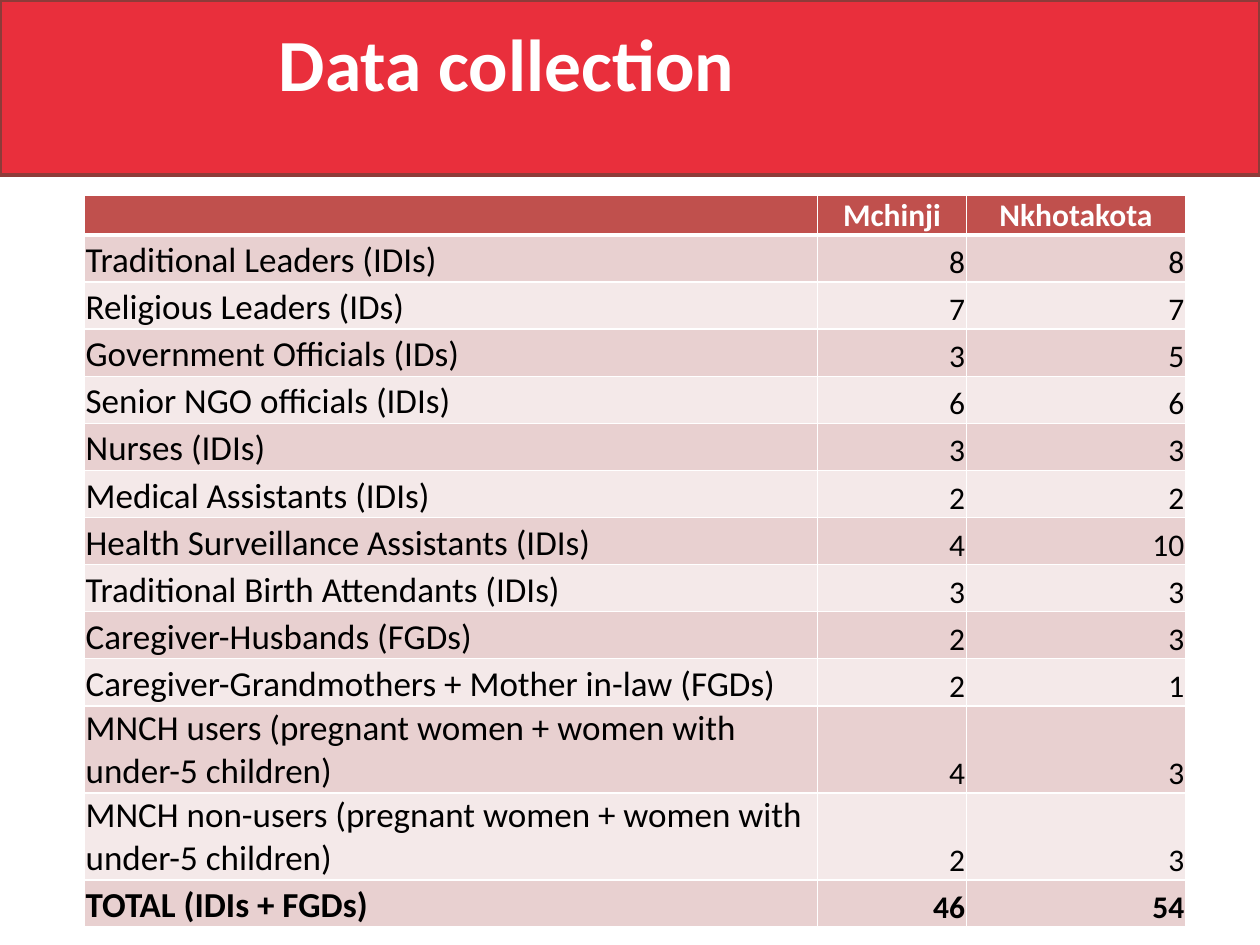
from lxml import etree
from pptx import Presentation
from pptx import util as u
from pptx.dml.color import RGBColor
from pptx.enum import shapes, text
from pptx.oxml.ns import qn

LEFT, CENTER, RIGHT = text.PP_ALIGN.LEFT, text.PP_ALIGN.CENTER, text.PP_ALIGN.RIGHT
HEADER = ("", "Mchinji", "Nkhotakota")
ROWS = [
    ("Traditional Leaders (IDIs)", 8, 8),
    ("Religious Leaders (IDs)", 7, 7),
    ("Government Officials (IDs)", 3, 5),
    ("Senior NGO officials (IDIs)", 6, 6),
    ("Nurses (IDIs)", 3, 3),
    ("Medical Assistants (IDIs)", 2, 2),
    ("Health Surveillance Assistants (IDIs)", 4, 10),
    ("Traditional Birth Attendants (IDIs)", 3, 3),
    ("Caregiver-Husbands (FGDs)", 2, 3),
    ("Caregiver-Grandmothers + Mother in-law (FGDs)", 2, 1),
    ("MNCH users (pregnant women + women with under-5 children)", 4, 3),
    ("MNCH non-users (pregnant women + women with under-5 children)", 2, 3),
    ("TOTAL (IDIs + FGDs)", 46, 54),
]


def rgb(value):
    return RGBColor.from_string(value)


def write(tf, content, size=18, color="000000", bold=False, align=LEFT, font="Calibri"):
    p = tf.paragraphs[0]
    p.alignment = align
    r = p.add_run()
    r.text = str(content)
    r.font.name, r.font.size, r.font.bold = font, u.Pt(size), bold
    r.font.color.rgb = rgb(color)


class Deck:
    COLS, LINES = 100, 75
    RED, EDGE, HEAD, WHITE = "E92F3C", "8E3B39", "C0504D", "FFFFFF"
    BANDS = ("E8D0D0", "F4E9E9")

    def __init__(self):
        self.prs = Presentation()
        self.prs.slide_width, self.prs.slide_height = u.Inches(10), u.Inches(7.5)
        self.s = self.prs.slides.add_slide(self.prs.slide_layouts[6])

    def x(self, cols):
        return round(self.prs.slide_width * cols / self.COLS)

    def y(self, lines):
        return round(self.prs.slide_height * lines / self.LINES)

    def box(self, left, top, width, height):
        return self.x(left), self.y(top), self.x(width), self.y(height)

    def banner(self, *at):
        sp = self.s.shapes.add_shape(shapes.MSO_SHAPE.RECTANGLE, *self.box(*at))
        sp.shadow.inherit = False
        sp.fill.solid()
        sp.fill.fore_color.rgb = rgb(self.RED)
        sp.line.color.rgb = rgb(self.EDGE)
        sp.line.width = u.Pt(2)

    def title(self, content, *at):
        tf = self.s.shapes.add_textbox(*self.box(*at)).text_frame
        tf.word_wrap = True
        tf.vertical_anchor = text.MSO_ANCHOR.MIDDLE
        write(tf, content, size=42, color=self.WHITE, bold=True, align=CENTER)

    def borders(self, cell, widths):
        tc_pr = cell._tc.get_or_add_tcPr()
        for i, (side, width) in enumerate(widths.items()):
            ln = etree.Element(qn(f"a:ln{side}"), w=str(u.Pt(width)))
            fill = etree.SubElement(ln, qn("a:solidFill"))
            etree.SubElement(fill, qn("a:srgbClr"), val=self.WHITE)
            tc_pr.insert(i, ln)

    def cell(self, cell, content, fill, top=1, bottom=1, **style):
        cell.margin_left = cell.margin_right = cell.margin_top = u.Inches(0.01)
        cell.margin_bottom = 0
        cell.vertical_anchor = text.MSO_ANCHOR.BOTTOM
        cell.fill.solid()
        cell.fill.fore_color.rgb = rgb(fill)
        self.borders(cell, {"L": 1, "R": 1, "T": top, "B": bottom})
        write(cell.text_frame, content, **style)

    def table(self, left, top, widths, heights, header, rows):
        at = self.box(left, top, sum(widths), sum(heights))
        table = self.s.shapes.add_table(len(heights), len(widths), *at).table
        for col, width in zip(table.columns, widths):
            col.width = self.x(width)
        for row, height in zip(table.rows, heights):
            row.height = self.y(height)
        for c, label in enumerate(header):
            self.cell(table.cell(0, c), label, self.HEAD, bottom=3,
                      color=self.WHITE, bold=True, align=CENTER)
        for i, row in enumerate(rows):
            for c, value in enumerate(row):
                self.cell(table.cell(i + 1, c), value, self.BANDS[i % 2],
                          top=1 if i else 3, bold=i == len(rows) - 1,
                          size=18 if c else 20, align=RIGHT if c else LEFT)


def main():
    deck = Deck()
    deck.banner(0, 0, 100, 13.9)
    heights = [3.1] + [6.9 if len(row[0]) > 50 else 3.74 for row in ROWS]
    deck.table(6.7, 15.5, (58.2, 11.8, 17.4), heights, HEADER, ROWS)
    deck.title("Data collection", 2.8, 0, 74.8, 9.9)
    deck.prs.save("out.pptx")


if __name__ == "__main__":
    main()
